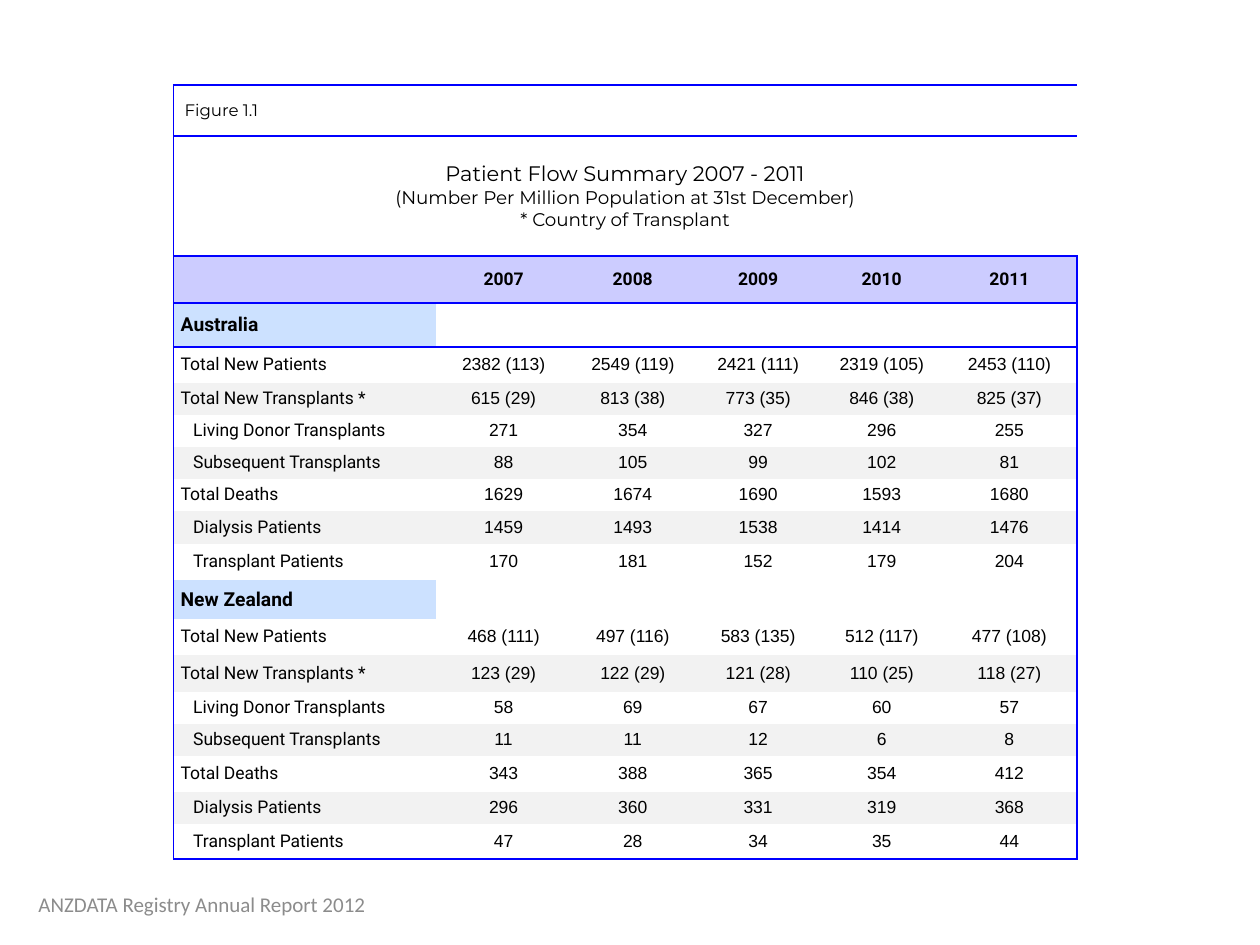
"""Builds the patient flow summary table slide."""
from lxml import etree
from pptx import Presentation
from pptx.dml.color import RGBColor
from pptx.enum.text import MSO_ANCHOR, PP_ALIGN
from pptx.oxml.ns import qn
from pptx.util import Pt

LEFT, CENTER = PP_ALIGN.LEFT, PP_ALIGN.CENTER
MIDDLE = MSO_ANCHOR.MIDDLE
PLAIN_STYLE = "{2D5ABB26-0587-4C30-8999-92F81FD0307C}"
BLUE = "0000FF"

YEARS = ["2007", "2008", "2009", "2010", "2011"]
LABELS = ["Total New Patients", "Total New Transplants *",
          "Living Donor Transplants", "Subsequent Transplants",
          "Total Deaths", "Dialysis Patients", "Transplant Patients"]
INDENTED = {LABELS[2], LABELS[3], LABELS[5], LABELS[6]}
COUNTRIES = {
    "Australia": [
        ["2382 (113)", "2549 (119)", "2421 (111)", "2319 (105)", "2453 (110)"],
        ["615 (29)", "813 (38)", "773 (35)", "846 (38)", "825 (37)"],
        ["271", "354", "327", "296", "255"],
        ["88", "105", "99", "102", "81"],
        ["1629", "1674", "1690", "1593", "1680"],
        ["1459", "1493", "1538", "1414", "1476"],
        ["170", "181", "152", "179", "204"],
    ],
    "New Zealand": [
        ["468 (111)", "497 (116)", "583 (135)", "512 (117)", "477 (108)"],
        ["123 (29)", "122 (29)", "121 (28)", "110 (25)", "118 (27)"],
        ["58", "69", "67", "60", "57"],
        ["11", "11", "12", "6", "8"],
        ["343", "388", "365", "354", "412"],
        ["296", "360", "331", "319", "368"],
        ["47", "28", "34", "35", "44"],
    ],
}
TITLE_LINES = [("Patient Flow Summary 2007 - 2011", 12),
               ("(Number Per Million Population at 31st December)", 10.5),
               ("* Country of Transplant", 10.5)]
COLUMN_WIDTHS = [150, 77.1, 70.6, 72.7, 68.6, 77.2]
ROW_HEIGHTS = [29.1, 68.6, 26.9, 25.1, 20.6, 18.3, 18.3, 18.3, 18.3, 18.9,
               20.6, 22.3, 20.6, 21.1, 18.3, 18.3, 20.6, 18.3, 20]


def rgb(color):
    return RGBColor.from_string(color)


def write(para, text, font, size, align=LEFT, bold=False, color="000000"):
    para.alignment = align
    span = para.add_run()
    span.text = text
    formats = {"name": font, "size": Pt(size), "bold": bold}
    for name, value in formats.items():
        setattr(span.font, name, value)
    span.font.color.rgb = rgb(color)


deck = Presentation()
deck.slide_width, deck.slide_height = Pt(720), Pt(540)
page = deck.slides.add_slide(deck.slide_layouts[6])

frame = page.shapes.add_table(
    len(ROW_HEIGHTS), len(COLUMN_WIDTHS), Pt(99.2), Pt(48.6),
    Pt(sum(COLUMN_WIDTHS)), Pt(sum(ROW_HEIGHTS)))
table = frame.table
table.first_row = table.horz_banding = False
next(table._tbl.iter(qn("a:tableStyleId"))).text = PLAIN_STYLE
for column, width in zip(table.columns, COLUMN_WIDTHS):
    column.width = Pt(width)
for row, height in zip(table.rows, ROW_HEIGHTS):
    row.height = Pt(height)

rows = [["Figure 1.1"], [""], ["", *YEARS]]
for country, values in COUNTRIES.items():
    rows.append([country])
    rows += [[label, *numbers] for label, numbers in zip(LABELS, values)]

last_row, last_column = len(rows) - 1, len(COLUMN_WIDTHS) - 1
for row_index, texts in enumerate(rows):
    is_country = texts[0] in COUNTRIES
    for column_index in range(len(COLUMN_WIDTHS)):
        cell = table.cell(row_index, column_index)
        text = texts[column_index] if column_index < len(texts) else ""
        margins = dict.fromkeys(["margin_left", "margin_right", "margin_top", "margin_bottom"], Pt(1.5))
        if column_index == 0:
            margins["margin_left"] = Pt(6.3 if row_index == 0 else 11.2 if text in INDENTED else 4)
        for name, value in {**margins, "vertical_anchor": MIDDLE}.items():
            setattr(cell, name, value)

        edges = {"a:lnL": column_index == 0, "a:lnR": column_index == last_column,
                 "a:lnT": row_index <= 3, "a:lnB": row_index <= 2 or row_index == last_row}
        for tag, visible in edges.items():
            if visible:
                line = etree.SubElement(cell._tc.get_or_add_tcPr(), qn(tag), w=str(Pt(1)))
                paint = etree.SubElement(line, qn("a:solidFill"))
                etree.SubElement(paint, qn("a:srgbClr"), val=BLUE)

        fill = None
        if row_index == 2:
            fill = "CCCCFF"
        elif is_country:
            fill = "CCE1FF" if column_index == 0 else None
        elif row_index > 3 and row_index % 2:
            fill = "F2F2F2"
        if fill:
            cell.fill.solid()
            cell.fill.fore_color.rgb = rgb(fill)
        else:
            cell.fill.background()

        para = cell.text_frame.paragraphs[0]
        if not text:
            if row_index != 1 or column_index:
                etree.SubElement(para._p, qn("a:endParaRPr"), sz="1000")
        elif row_index == 0:
            write(para, text, "Montserrat", 9.5)
        elif row_index == 2:
            write(para, text, "Roboto", 10, CENTER, True)
        elif column_index == 0:
            write(para, text, "Roboto", 11 if is_country else 10, bold=is_country)
        else:
            write(para, text, "Arial", 10, CENTER)

for row_index in range(2):
    table.cell(row_index, 0).merge(table.cell(row_index, last_column))
title = table.cell(1, 0)
title.margin_left = Pt(1.5)
for line_index, (text, size) in enumerate(TITLE_LINES):
    para = title.text_frame.add_paragraph() if line_index else title.text_frame.paragraphs[0]
    write(para, text, "Montserrat", size, CENTER)

footer = page.shapes.add_textbox(Pt(1.4), Pt(502), Pt(228.2), Pt(28.8))
footer.text_frame.word_wrap = True
footer.text_frame.vertical_anchor = MIDDLE
write(footer.text_frame.paragraphs[0], "ANZDATA Registry Annual Report 2012",
      "Calibri", 12, CENTER, color="8C8C8C")

deck.save("out.pptx")
